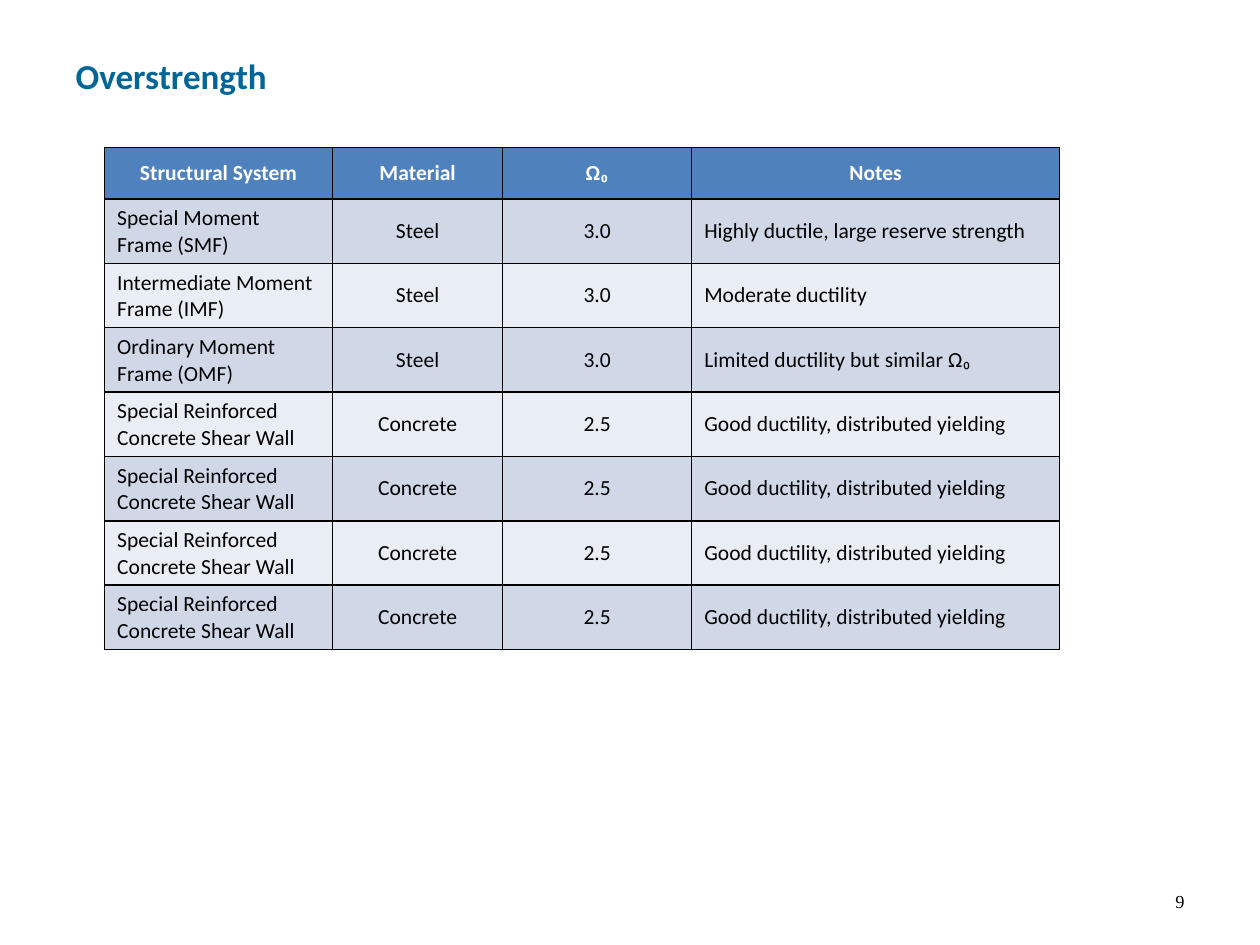
from dataclasses import dataclass

from lxml.etree import SubElement
from pptx import Presentation
from pptx.dml.color import RGBColor
from pptx.enum.text import MSO_ANCHOR, MSO_AUTO_SIZE, PP_ALIGN
from pptx.oxml.ns import qn
from pptx.util import Inches, Pt

SLIDE_WIDTH, SLIDE_HEIGHT = Inches(10), Inches(7.5)


@dataclass(frozen=True)
class Theme:
    heading: str = "006699"
    header_fill: str = "4F81BD"
    header_text: str = "FFFFFF"
    body_text: str = "000000"
    number_text: str = "010000"
    bands: tuple = ("D0D8E8", "E9EDF4")
    border: str = "000000"
    border_width: float = 1
    font: str = "Calibri"
    number_font: str = "Times New Roman"
    title_size: float = 20
    table_size: float = 12.3
    number_size: float = 10.5


THEME = Theme()

HEADERS = ("Structural System", "Material", "Ω₀", "Notes")
SHEAR_WALL = ("Special Reinforced Concrete Shear Wall", "Concrete", "2.5",
              "Good ductility, distributed yielding")
SYSTEMS = [
    ("Special Moment Frame (SMF)", "Steel", "3.0", "Highly ductile, large reserve strength"),
    ("Intermediate Moment Frame (IMF)", "Steel", "3.0", "Moderate ductility"),
    ("Ordinary Moment Frame (OMF)", "Steel", "3.0", "Limited ductility but similar Ω₀"),
] + [SHEAR_WALL] * 4
COLUMN_WEIGHTS = (1.81, 1.35, 1.5, 2.92)
ROW_WEIGHTS = (0.41,) + (0.51,) * len(SYSTEMS)
CENTERED_COLUMNS = (1, 2)


def slide_box(left, top, width, height):
    """Turn percentages of the slide's size into lengths."""
    return (int(SLIDE_WIDTH * left / 100), int(SLIDE_HEIGHT * top / 100),
            int(SLIDE_WIDTH * width / 100), int(SLIDE_HEIGHT * height / 100))


def share_out(total, weights):
    return [int(total * weight / sum(weights)) for weight in weights]


def write_text(text_frame, text, *, size, color, font=THEME.font, bold=False,
               align=PP_ALIGN.LEFT, space_after=0):
    paragraph = text_frame.paragraphs[0]
    paragraph.alignment = align
    paragraph.space_before = Pt(0)
    paragraph.space_after = Pt(space_after)
    run = paragraph.add_run()
    run.text = text
    run.font.name = font
    run.font.size = Pt(size)
    run.font.bold = bold
    run.font.color.rgb = RGBColor.from_string(color)


def add_borders(cell):
    properties = cell._tc.get_or_add_tcPr()
    for side in ("lnL", "lnR", "lnT", "lnB"):
        line = SubElement(properties, qn(f"a:{side}"), w=str(Pt(THEME.border_width)))
        fill = SubElement(line, qn("a:solidFill"))
        SubElement(fill, qn("a:srgbClr"), val=THEME.border)


def place_title(slide, box, text):
    title = slide.shapes.title
    title.left, title.top, title.width, title.height = box
    text_frame = title.text_frame
    text_frame.word_wrap = True
    text_frame.auto_size = MSO_AUTO_SIZE.SHAPE_TO_FIT_TEXT
    text_frame.vertical_anchor = MSO_ANCHOR.TOP
    write_text(text_frame, text, size=THEME.title_size, color=THEME.heading,
               bold=True, space_after=1.5)


def place_page_number(slide, box, text):
    text_frame = slide.shapes.add_textbox(*box).text_frame
    text_frame.word_wrap = True
    text_frame.vertical_anchor = MSO_ANCHOR.MIDDLE
    write_text(text_frame, text, size=THEME.number_size, color=THEME.number_text,
               font=THEME.number_font, align=PP_ALIGN.RIGHT)


def place_systems_table(slide, box):
    rows = [HEADERS, *SYSTEMS]
    table = slide.shapes.add_table(len(rows), len(HEADERS), *box).table
    for column, width in zip(table.columns, share_out(box[2], COLUMN_WEIGHTS)):
        column.width = width
    for row, height in zip(table.rows, share_out(box[3], ROW_WEIGHTS)):
        row.height = height
    for row_index, values in enumerate(rows):
        is_header = row_index == 0
        fill = THEME.header_fill if is_header else THEME.bands[(row_index - 1) % 2]
        for column_index, value in enumerate(values):
            cell = table.cell(row_index, column_index)
            add_borders(cell)
            cell.fill.solid()
            cell.fill.fore_color.rgb = RGBColor.from_string(fill)
            cell.vertical_anchor = MSO_ANCHOR.MIDDLE
            centered = is_header or column_index in CENTERED_COLUMNS
            write_text(cell.text_frame, value, size=THEME.table_size, bold=is_header,
                       color=THEME.header_text if is_header else THEME.body_text,
                       align=PP_ALIGN.CENTER if centered else PP_ALIGN.LEFT)


def main():
    presentation = Presentation()
    presentation.slide_width, presentation.slide_height = SLIDE_WIDTH, SLIDE_HEIGHT
    slide = presentation.slides.add_slide(presentation.slide_layouts.get_by_name("Title Only"))
    place_title(slide, slide_box(5, 5.07, 64.2, 5.87), "Overstrength")
    place_systems_table(slide, slide_box(8.3, 15.6, 75.8, 53.07))
    place_page_number(slide, slide_box(71.7, 92.67, 23.3, 5.33), "9")
    presentation.save("out.pptx")


if __name__ == "__main__":
    main()
